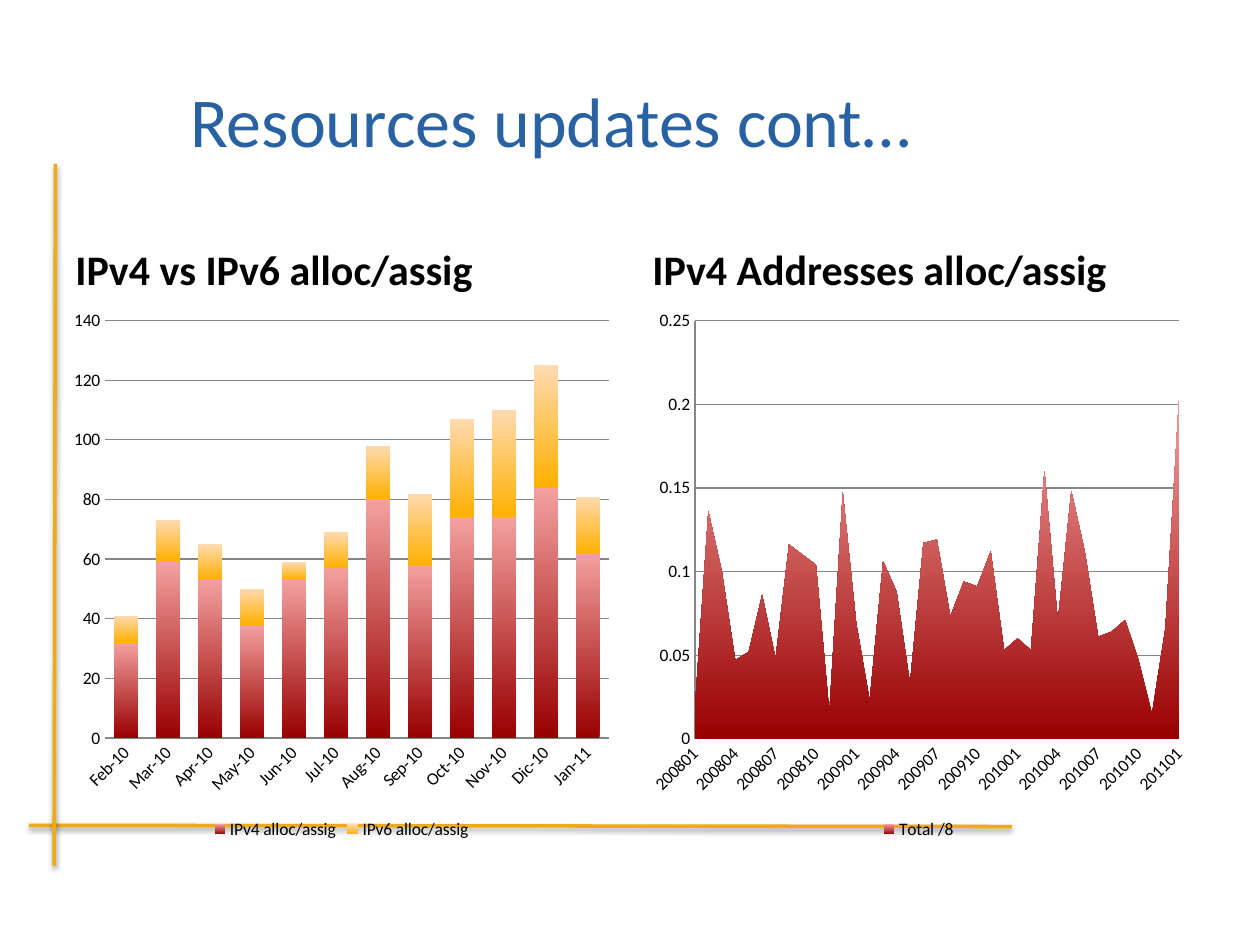
from lxml.etree import SubElement
from pptx import Presentation
from pptx.chart.data import CategoryChartData
from pptx.dml.color import RGBColor
from pptx.enum.chart import XL_CHART_TYPE, XL_LEGEND_POSITION, XL_TICK_MARK
from pptx.enum.shapes import MSO_CONNECTOR
from pptx.enum.text import MSO_ANCHOR, PP_ALIGN
from pptx.oxml import parse_xml
from pptx.oxml.ns import nsdecls, qn
from pptx.util import Inches, Pt

THEME = {
    "font": "Calibri", "title": 40, "heading": 24, "chart": 10,
    "blue": "2962A2", "black": "000000", "gold": "EFAB16", "grid": "868686",
    "red": ("990000", "F4A0A0"), "amber": ("FFB000", "FFDAB0"),
}


def rgb(value):
    return RGBColor.from_string(value)


def style_font(font, size, color, bold=False):
    font.name, font.size, font.bold = THEME["font"], Pt(size), bold
    font.color.rgb = rgb(color)


prs = Presentation()
prs.slide_width, prs.slide_height = Inches(10), Inches(7.5)
s = prs.slides.add_slide(prs.slide_layouts[5])

MARGIN, GAP = Inches(0.5), Inches(0.16)
COL_W = (prs.slide_width - 2 * MARGIN - GAP) // 2
COLS = [MARGIN + i * (COL_W + GAP) for i in range(2)]
HEAD_TOP, HEAD_H = Inches(1.68), Inches(0.7)
CHART_TOP, CHART_H = HEAD_TOP + HEAD_H, Inches(4.32)

for ends in ((0.23, 6.55, 8.03, 6.56), (0.43, 6.87, 0.44, 1.3)):
    sp = s.shapes.add_connector(MSO_CONNECTOR.STRAIGHT, *map(Inches, ends))
    sp.line.color.rgb, sp.line.width = rgb(THEME["gold"]), Pt(2)
    sp._element.spPr.append(parse_xml(
        f'<a:effectLst {nsdecls("a")}><a:outerShdw blurRad="39370" dist="20320" dir="5400000" rotWithShape="0">'
        '<a:srgbClr val="000000"><a:alpha val="38000"/></a:srgbClr></a:outerShdw></a:effectLst>'))

sp = s.shapes.title
sp.left, sp.top, sp.width, sp.height = MARGIN, Inches(0.3), Inches(7.74), Inches(1.29)
tf = sp.text_frame
tf.text = "Resources updates cont…"
tf.vertical_anchor = MSO_ANCHOR.MIDDLE
p = tf.paragraphs[0]
p.alignment = PP_ALIGN.CENTER
style_font(p.runs[0].font, THEME["title"], THEME["blue"])

month_names = "Feb-10 Mar-10 Apr-10 May-10 Jun-10 Jul-10 Aug-10 Sep-10 Oct-10 Nov-10 Dic-10 Jan-11"
year_months = [f"{2008 + i // 12}{i % 12 + 1:02d}" for i in range(37)]
panels = [
    {
        "heading": "IPv4 vs IPv6 alloc/assig", "type": XL_CHART_TYPE.COLUMN_STACKED,
        "cats": month_names.split(), "max": 140, "unit": 20, "skip": 1,
        "series": [
            ("IPv4 alloc/assig", "red", [32, 59, 53, 38, 53, 57, 80, 58, 74, 74, 84, 62]),
            ("IPv6 alloc/assig", "amber", [9, 14, 12, 12, 6, 12, 18, 24, 33, 36, 41, 19]),
        ],
    },
    {
        "heading": "IPv4 Addresses alloc/assig", "type": XL_CHART_TYPE.AREA,
        "cats": year_months, "max": 0.25, "unit": 0.05, "skip": 3,
        "series": [("Total /8", "red", [
            0.019, 0.136, 0.1, 0.047, 0.052, 0.086, 0.048, 0.116, 0.11, 0.104, 0.016, 0.147,
            0.069, 0.023, 0.106, 0.088, 0.033, 0.117, 0.119, 0.073, 0.094, 0.091, 0.112, 0.053,
            0.06, 0.053, 0.16, 0.07, 0.148, 0.112, 0.061, 0.064, 0.071, 0.047, 0.015, 0.066, 0.202])],
    },
]

for left, panel in zip(COLS, panels):
    tf = s.shapes.add_textbox(left, HEAD_TOP, COL_W, HEAD_H).text_frame
    tf.word_wrap, tf.vertical_anchor = True, MSO_ANCHOR.BOTTOM
    tf.text = panel["heading"]
    style_font(tf.paragraphs[0].runs[0].font, THEME["heading"], THEME["black"], True)

    data = CategoryChartData(number_format="General")
    data.categories = panel["cats"]
    for name, color, values in panel["series"]:
        data.add_series(name, values)
    chart = s.shapes.add_chart(panel["type"], left, CHART_TOP, COL_W, CHART_H, data).chart
    style_font(chart.font, THEME["chart"], THEME["black"])
    chart.has_title = False
    chart.has_legend = True
    chart.legend.position = XL_LEGEND_POSITION.BOTTOM
    chart.legend.include_in_layout = False

    plot = chart.plots[0]
    plot.vary_by_categories = False
    for series, (name, color, values) in zip(plot.series, panel["series"]):
        fill = series.format.fill
        fill.gradient()
        fill.gradient_angle = 90
        for stop, value in zip(fill.gradient_stops, THEME[color]):
            stop.color.rgb = rgb(value)

    cat, val = chart.category_axis, chart.value_axis
    for axis in (cat, val):
        axis.major_tick_mark = axis.minor_tick_mark = XL_TICK_MARK.NONE
        axis.format.line.color.rgb = rgb(THEME["grid"])
        style_font(axis.tick_labels.font, THEME["chart"], THEME["black"])
    cat.has_major_gridlines = False
    cat._element.find(qn("c:txPr")).find(qn("a:bodyPr")).set("rot", "-2700000")
    skip = SubElement(cat._element, qn("c:tickLblSkip"), val=str(panel["skip"]))
    cat._element.find(qn("c:noMultiLvlLbl")).addprevious(skip)
    val.minimum_scale, val.maximum_scale, val.major_unit = 0, panel["max"], panel["unit"]
    val.has_major_gridlines = True
    val.major_gridlines.format.line.color.rgb = rgb(THEME["grid"])
    val.tick_labels.number_format = "General"
    val.tick_labels.number_format_is_linked = False

    if panel["type"] == XL_CHART_TYPE.COLUMN_STACKED:
        plot.gap_width, plot.overlap = 75, 100
        val.format.line.fill.background()
    else:
        val._element.find(qn("c:crossBetween")).set("val", "midCat")

prs.save("out.pptx")
